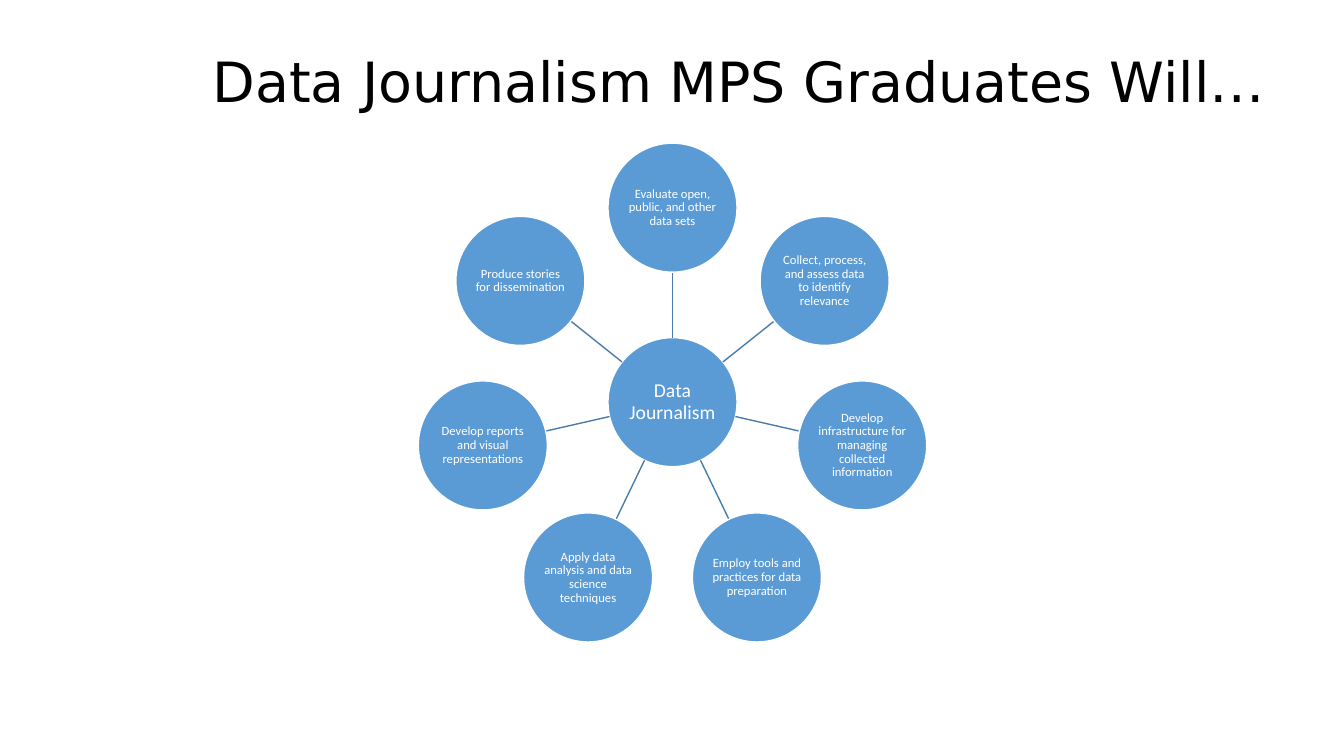
from dataclasses import dataclass
from math import cos, pi, sin

from lxml.etree import SubElement
from pptx import Presentation
from pptx.dml.color import RGBColor as RGB
from pptx.enum.shapes import MSO_CONNECTOR as CONN, MSO_SHAPE as SHAPE
from pptx.enum.text import MSO_ANCHOR as ANCHOR, PP_ALIGN as ALIGN
from pptx.oxml.ns import qn
from pptx.util import Inches, Pt


@dataclass(frozen=True)
class Theme:
    """Colours, fonts and type sizes of the slide."""
    node: RGB = RGB(0x5B, 0x9B, 0xD5)
    spoke: RGB = RGB(0x49, 0x7C, 0xAB)
    white: RGB = RGB(0xFF, 0xFF, 0xFF)
    black: RGB = RGB(0, 0, 0)
    title_font: str = "DejaVu Sans"
    body_font: str = "Calibri"
    title_size: float = 39.6
    hub_size: float = 14
    node_size: float = 9


def write(tf, text, *, font, size, color, align=ALIGN.LEFT, inset=None):
    """Fill a text frame with one formatted paragraph."""
    tf.word_wrap = True
    tf.vertical_anchor = ANCHOR.MIDDLE
    if inset is not None:
        tf.margin_left = tf.margin_right = Inches(inset)
        tf.margin_top = tf.margin_bottom = Inches(inset)
    p = tf.paragraphs[0]
    p.alignment = align
    p.line_spacing = 0.9
    r = p.add_run()
    r.text = text
    r.font.name = font
    r.font.size = Pt(size)
    r.font.color.rgb = color


class Deck:
    """Holds the theme and the current slide."""

    def __init__(self, s, theme):
        """Keep the slide and its theme."""
        self.s = s
        self.theme = theme

    def title(self, text, left, top, width, height):
        """Add the slide title."""
        t = self.theme
        sp = self.s.shapes.add_textbox(*map(Inches, (left, top, width, height)))
        write(sp.text_frame, text, font=t.title_font, size=t.title_size, color=t.black)

    def circle(self, text, x, y, radius, size):
        """Add a labelled circle centred on a point."""
        t = self.theme
        sp = self.s.shapes.add_shape(SHAPE.OVAL, Inches(x - radius), Inches(y - radius),
                                     Inches(2 * radius), Inches(2 * radius))
        sp.shadow.inherit = False
        sp.fill.solid()
        sp.fill.fore_color.rgb = t.node
        sp.line.color.rgb = t.white
        sp.line.width = Pt(1)
        write(sp.text_frame, text, font=t.body_font, size=size, color=t.white,
              align=ALIGN.CENTER, inset=0.01)

    def spoke(self, start, end):
        """Add a straight line between two points."""
        c = self.s.shapes.add_connector(CONN.STRAIGHT, *map(Inches, (*start, *end)))
        c.line.color.rgb = self.theme.spoke
        c.line.width = Pt(1)
        SubElement(c._element.spPr, qn("a:effectLst"))


SKILLS = [
    "Evaluate open, public, and other data sets",
    "Collect, process, and assess data to identify relevance",
    "Develop infrastructure for managing collected information",
    "Employ tools and practices for data preparation",
    "Apply data analysis and data science techniques",
    "Develop reports and visual representations",
    "Produce stories for dissemination",
]
HUB_X, HUB_Y = 6.67, 3.99
RADIUS = 0.64
ORBIT = 1.93


def on_ring(angle, distance):
    """Return the point at a clockwise angle from the top of the hub."""
    return HUB_X + distance * sin(angle), HUB_Y - distance * cos(angle)


def main():
    """Build and save the slide."""
    prs = Presentation()
    prs.slide_width, prs.slide_height = Inches(13.33), Inches(7.5)
    theme = Theme()
    deck = Deck(prs.slides.add_slide(prs.slide_layouts[6]), theme)
    deck.title("Data Journalism MPS Graduates Will…", 2.01, 0.4, 11.03, 0.87)
    deck.circle("Data Journalism", HUB_X, HUB_Y, RADIUS, theme.hub_size)
    for i, skill in enumerate(SKILLS):
        angle = 2 * pi * i / len(SKILLS)
        deck.spoke(on_ring(angle, RADIUS), on_ring(angle, ORBIT - RADIUS))
        deck.circle(skill, *on_ring(angle, ORBIT), RADIUS, theme.node_size)
    prs.save("out.pptx")


if __name__ == "__main__":
    main()
